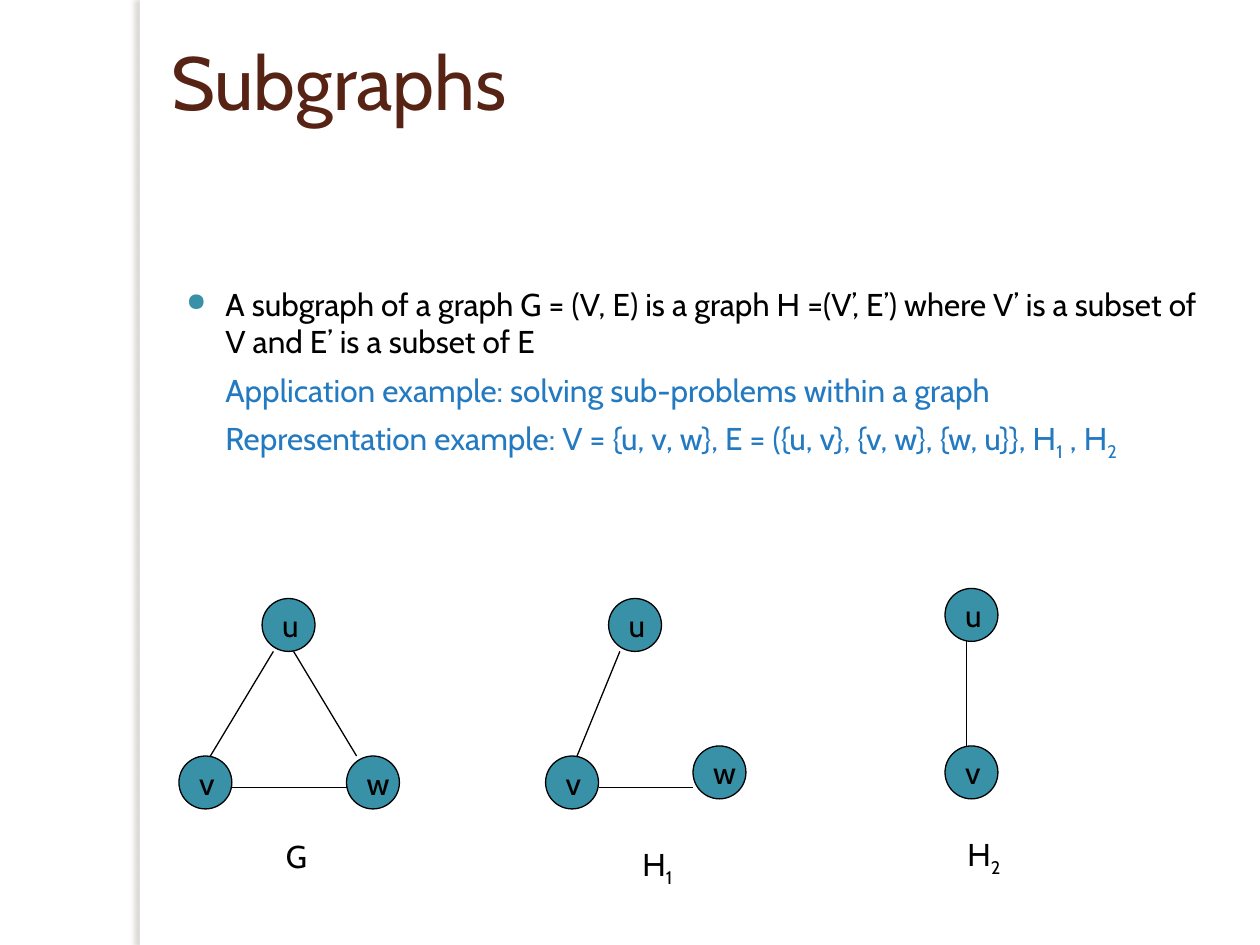
from lxml import etree
from pptx import Presentation
from pptx.dml.color import RGBColor
from pptx.enum.shapes import MSO_CONNECTOR, MSO_SHAPE
from pptx.enum.text import MSO_ANCHOR, PP_ALIGN
from pptx.oxml.ns import qn
from pptx.util import Inches, Pt

RECTANGLE, OVAL = MSO_SHAPE.RECTANGLE, MSO_SHAPE.OVAL
STRAIGHT = MSO_CONNECTOR.STRAIGHT
MIDDLE, TOP = MSO_ANCHOR.MIDDLE, MSO_ANCHOR.TOP
LEFT = PP_ALIGN.LEFT

COLORS = {"white": "FFFFFF", "black": "000000", "teal": "3891A7",
          "brown": "572314", "blue": "237AC1", "shadow": "736F63"}
FONT = "Cabin"
NODE_SIZE = 0.42
LABEL_SIZE = (0.33, 0.25)

# Each paragraph: bullet flag and runs of (text, color, is subscript)
BODY = [
    (True, [("A subgraph of a graph G = (V, E) is a graph H =(V’, E’) where "
             "V’ is a subset of V and E’ is a subset of E", "black", False)]),
    (False, [("\t", "black", False),
             ("Application example: solving sub-problems within a graph",
              "blue", False)]),
    (False, [("\t", "black", False),
             ("Representation example: V = {u, v, w}, "
              "E = ({u, v}, {v, w}, {w, u}}, H", "blue", False),
             ("1", "blue", True), (" , H", "blue", False),
             ("2", "blue", True)]),
]

# Nodes give left and top, edges give both ends, labels give left and top
GRAPHS = [
    {"nodes": [("u", 2.08, 4.75), ("v", 1.42, 6), ("w", 2.75, 6)],
     "edges": [(2.17, 5.17, 1.67, 6), (2.33, 5.17, 2.83, 6),
               (1.83, 6.25, 2.75, 6.25)],
     "label": ("G", "", 2.17, 6.67)},
    {"nodes": [("u", 4.83, 4.75), ("v", 4.33, 6), ("w", 5.5, 5.92)],
     "edges": [(4.92, 5.17, 4.58, 6), (4.75, 6.25, 5.5, 6.25)],
     "label": ("H", "1", 5, 6.75)},
    {"nodes": [("u", 7.5, 4.67), ("v", 7.5, 5.92)],
     "edges": [(7.67, 5.08, 7.67, 5.92)],
     "label": ("H", "2", 7.58, 6.67)},
]


def rgb(name):
    return RGBColor.from_string(COLORS[name])


def apply_format(target, values):
    for name, value in values.items():
        setattr(target, name, value)


def add_run(paragraph, text, color="black", subscript=False, size=18):
    run = paragraph.add_run()
    run.text = text
    apply_format(run.font, {"name": FONT, "size": Pt(size)})
    run.font.color.rgb = rgb(color)
    if subscript:
        run.font._element.set("baseline", "-25000")


def add_text_box(slide, left, top, width, height):
    box = slide.shapes.add_textbox(*map(Inches, (left, top, width, height)))
    apply_format(box.text_frame, {"word_wrap": True, "vertical_anchor": TOP})
    return box.text_frame


def add_box(slide, kind, bounds, fill, line=None):
    shape = slide.shapes.add_shape(kind, *map(Inches, bounds))
    shape.shadow.inherit = False
    shape.fill.solid()
    shape.fill.fore_color.rgb = rgb(fill)
    if line:
        shape.line.color.rgb = rgb(line)
        shape.line.width = Pt(0.75)
    else:
        shape.line.fill.background()
    return shape


def add_labelled_box(slide, kind, bounds, fill, line, text, subscript=""):
    frame = add_box(slide, kind, bounds, fill, line).text_frame
    apply_format(frame, {"word_wrap": False, "vertical_anchor": MIDDLE})
    paragraph = frame.paragraphs[0]
    paragraph.alignment = LEFT
    add_run(paragraph, text)
    if subscript:
        add_run(paragraph, subscript, subscript=True)


def add_edge(slide, ends):
    edge = slide.shapes.add_connector(STRAIGHT, *map(Inches, ends))
    edge.line.color.rgb = rgb("black")
    edge.line.width = Pt(0.75)
    etree.SubElement(edge._element.spPr, qn("a:effectLst"))


def add_side_bar(slide):
    bar = add_box(slide, RECTANGLE, (1.11, 0, 0.08, 7.5), "white")
    effects = bar._element.spPr.find(qn("a:effectLst"))
    shadow = etree.SubElement(effects, qn("a:outerShdw"), {
        "blurRad": str(Pt(3)), "dist": str(Pt(3)), "dir": "10800000",
        "algn": "tl", "rotWithShape": "0"})
    color = etree.SubElement(shadow, qn("a:srgbClr"), val=COLORS["shadow"])
    etree.SubElement(color, qn("a:alpha"), val="25000")


def set_bullet(paragraph, bulleted):
    properties = paragraph._p.get_or_add_pPr()
    properties.set("marL", str(Inches(0.4)))
    properties.set("indent", str(Inches(-0.31)))
    if not bulleted:
        etree.SubElement(properties, qn("a:buNone"))
        return
    color = etree.SubElement(properties, qn("a:buClr"))
    etree.SubElement(color, qn("a:srgbClr"), val=COLORS["teal"])
    etree.SubElement(properties, qn("a:buSzPct"), val="80000")
    etree.SubElement(properties, qn("a:buChar"), char="●")


def add_body(slide):
    frame = add_text_box(slide, 1.29, 2.21, 8.5, 1.96)
    for index, (bulleted, runs) in enumerate(BODY):
        paragraph = frame.add_paragraph() if index else frame.paragraphs[0]
        set_bullet(paragraph, bulleted)
        paragraph.space_before = Pt(6 if index else 0)
        for text, color, subscript in runs:
            add_run(paragraph, text, color, subscript)


def add_graph(slide, graph):
    for name, left, top in graph["nodes"]:
        add_labelled_box(slide, OVAL, (left, top, NODE_SIZE, NODE_SIZE),
                         "teal", "black", name)
    for ends in graph["edges"]:
        add_edge(slide, ends)
    text, subscript, left, top = graph["label"]
    add_labelled_box(slide, RECTANGLE, (left, top, *LABEL_SIZE),
                     "white", "white", text, subscript)


def main():
    presentation = Presentation()
    presentation.slide_width = Inches(10)
    presentation.slide_height = Inches(7.5)
    slide = presentation.slides.add_slide(presentation.slide_layouts[6])

    # Side bar and title
    add_side_bar(slide)
    title = add_text_box(slide, 1.26, 0.23, 8.52, 1.6)
    add_run(title.paragraphs[0], "Subgraphs", "brown", size=43)

    # Definition and examples
    add_body(slide)

    # Graph G and its subgraphs
    for graph in GRAPHS:
        add_graph(slide, graph)

    presentation.save("out.pptx")


if __name__ == "__main__":
    main()
